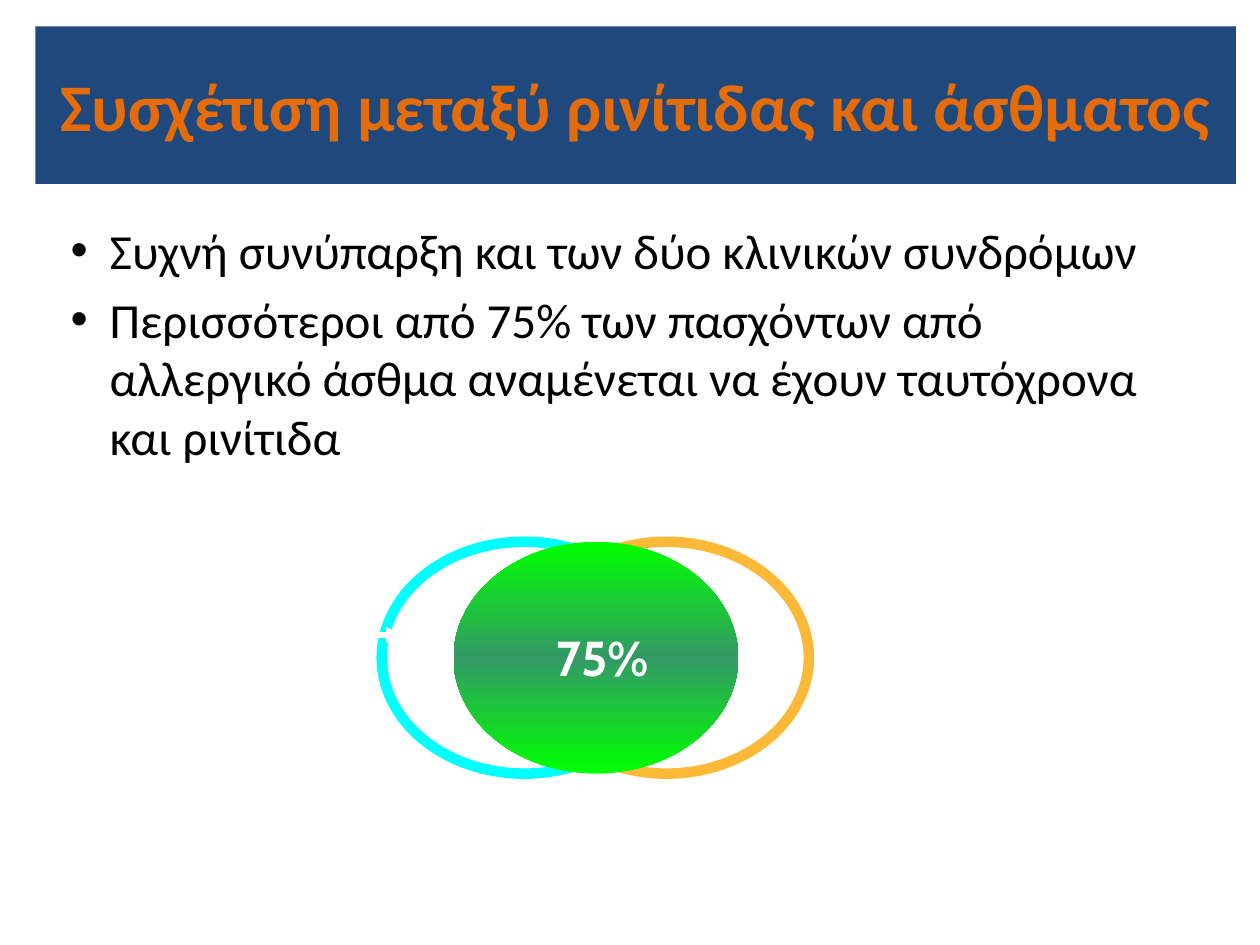
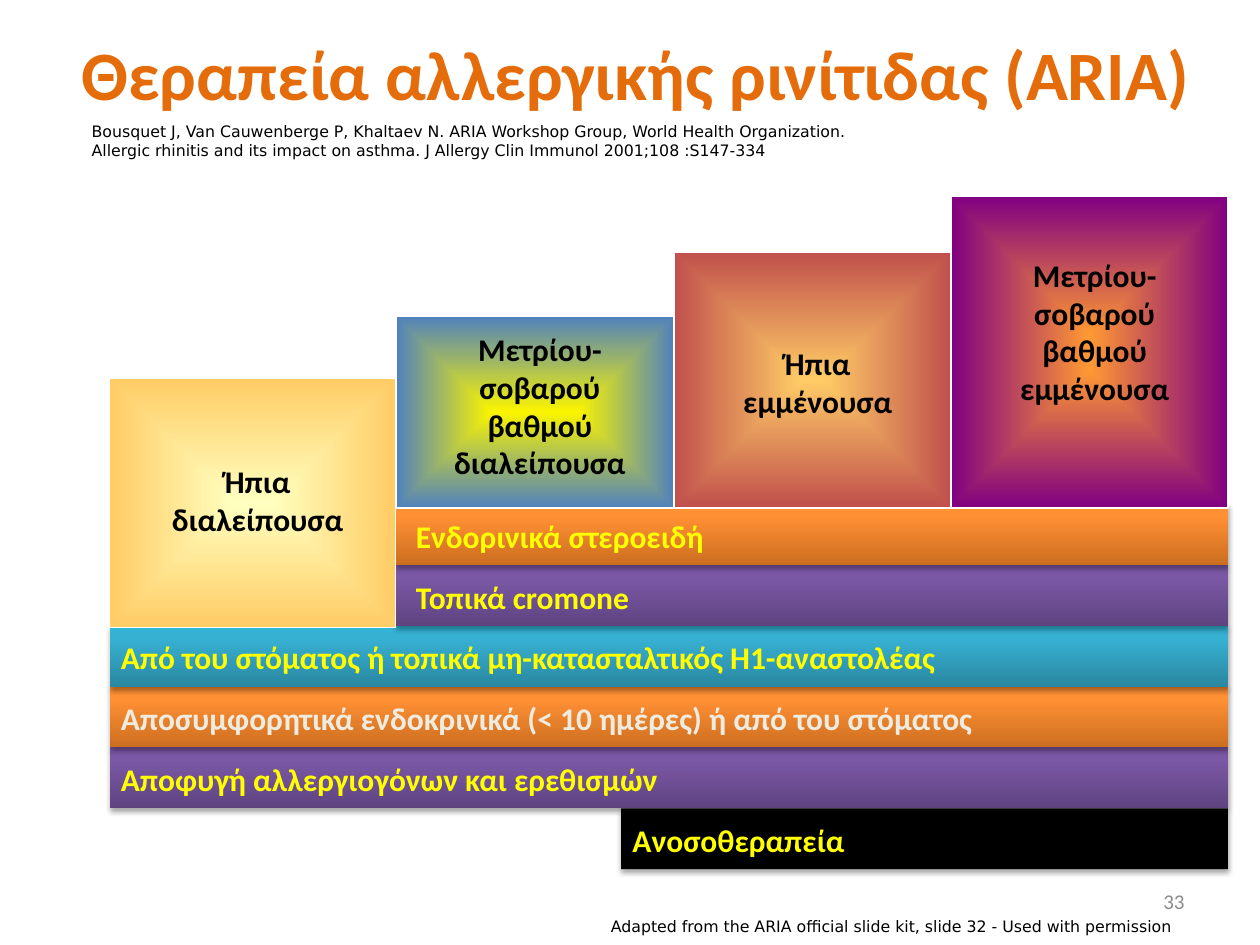
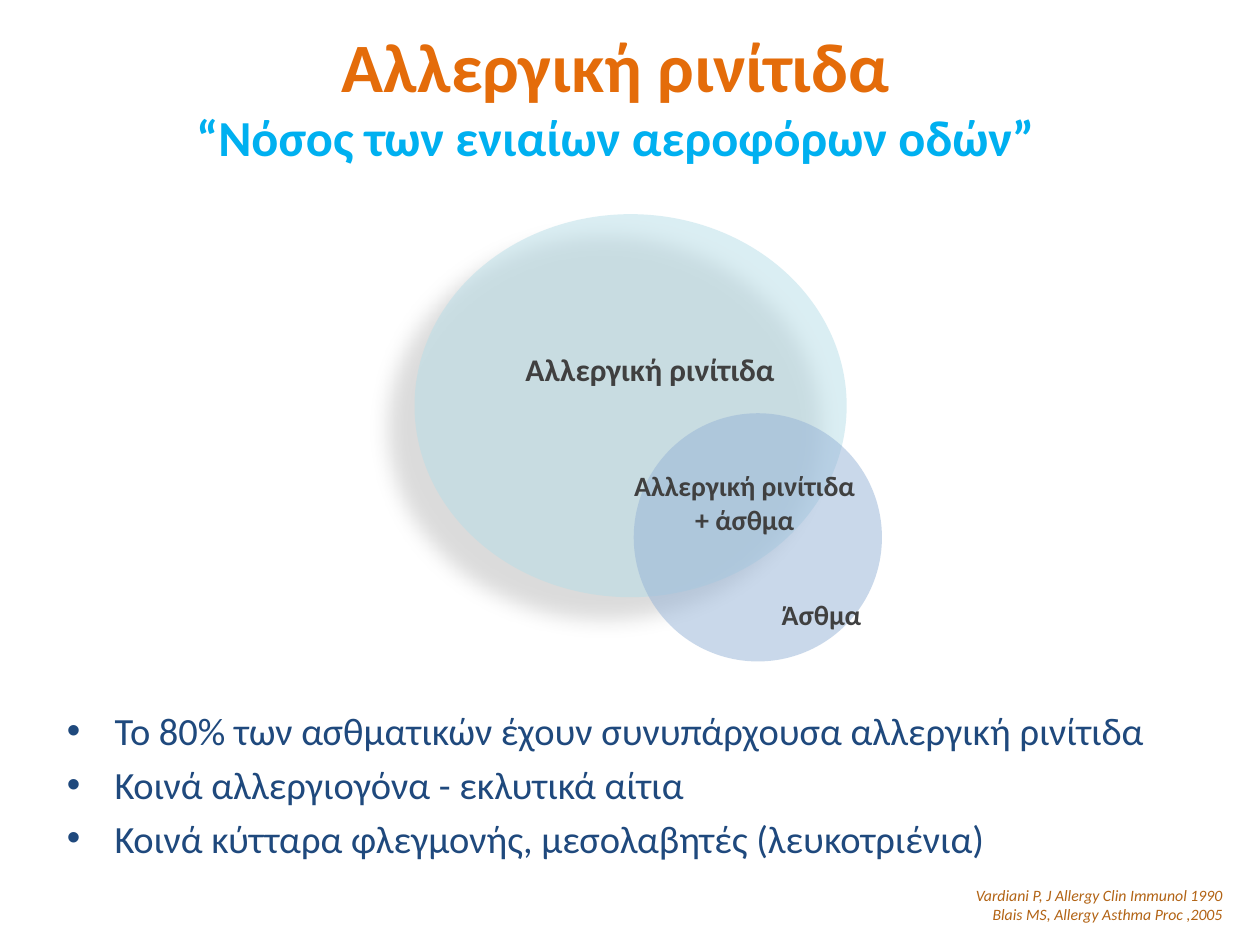
from copy import deepcopy
from typing import NamedTuple, Optional

from pptx import Presentation
from pptx.dml.color import RGBColor
from pptx.enum.shapes import MSO_CONNECTOR, MSO_SHAPE
from pptx.enum.text import MSO_ANCHOR, MSO_AUTO_SIZE, PP_ALIGN
from pptx.oxml import parse_xml
from pptx.oxml.ns import nsdecls, qn
from pptx.util import Inches, Pt

SLIDE_W, SLIDE_H = Inches(10), Inches(7.5)
COL, ROW = SLIDE_W / 100, SLIDE_H / 75  # grid of 100 columns by 75 rows

NAVY = RGBColor(0x1F, 0x49, 0x7D)
ORANGE = RGBColor(0xE4, 0x6C, 0x0A)
SKY = RGBColor(0x00, 0xB0, 0xF0)
BLACK = RGBColor(0x00, 0x00, 0x00)
WHITE = RGBColor(0xFF, 0xFF, 0xFF)
YELLOW = RGBColor(0xFF, 0xFF, 0x00)
CREAM = RGBColor(0xEE, 0xEC, 0xE1)
GREY = RGBColor(0x8C, 0x8C, 0x8C)
CHARCOAL = RGBColor(0x40, 0x40, 0x40)
BROWN = RGBColor(0xB2, 0x63, 0x14)
CYAN = RGBColor(0x00, 0xFF, 0xFF)
AMBER = RGBColor(0xFC, 0xB9, 0x38)
LIME = RGBColor(0x00, 0xFF, 0x00)
SEA_GREEN = RGBColor(0x33, 0x99, 0x66)
PALE_TEAL = RGBColor(0xB7, 0xDE, 0xE8)
PALE_BLUE = RGBColor(0x95, 0xB3, 0xD7)
SAND = RGBColor(0xFF, 0xCC, 0x66)


class Box(NamedTuple):
    """A place on the grid, in columns and rows."""
    left: float
    top: float
    width: float
    height: float

    def emu(self) -> tuple:
        return (round(self.left * COL), round(self.top * ROW),
                round(self.width * COL), round(self.height * ROW))


class Style(NamedTuple):
    size: float
    color: RGBColor
    bold: bool = False
    italic: bool = False
    name: str = "Calibri"


class Gradient(NamedTuple):
    """Stops are (percent, colour); no angle means a fill from the centre."""
    stops: tuple
    angle: Optional[int] = None


class Shadow(NamedTuple):
    alpha: int
    blur: float
    distance: float
    angle: int


class Bar(NamedTuple):
    text: str
    left: float
    inset: float
    fill: object
    color: RGBColor = YELLOW


class Stage(NamedTuple):
    lines: list
    left: float
    top: float
    bottom: float
    label_top: float
    inner: RGBColor
    outer: RGBColor


TITLE = Style(39.6, ORANGE, bold=True)
LABEL = Style(18, BLACK, bold=True)
SOURCE = Style(9, BLACK, name="DejaVu Sans")
NO_INSETS = dict.fromkeys(
    ("margin_left", "margin_top", "margin_right", "margin_bottom"), 0)


def bar_gradient(*colors: str) -> Gradient:
    stops = zip((0, 80, 100), map(RGBColor.from_string, colors))
    return Gradient(tuple(stops), 270)


PURPLE_BAR = bar_gradient("5F4480", "7B58A6", "7C57A8")
ORANGE_BAR = bar_gradient("CC6E20", "FF9034", "FF9136")
TEAL_BAR = bar_gradient("2A88A2", "37B1D2", "34B4D6")
BAR_SHADOW = Shadow(35, 3.1, 1.8, 90)

RIGHT_EDGE, BARS_TOP, BAR_H, LINE_H = 97.45, 40, 4.83, 3.02
BARS = [
    Bar("Ενδορινικά στεροειδή", 31.4, 1.6, ORANGE_BAR),
    Bar("Τοπικά cromone", 31.4, 1.6, PURPLE_BAR),
    Bar("Από του στόματος ή τοπικά μη-κατασταλτικός H1-αναστολέας",
        8.7, 0.9, TEAL_BAR),
    Bar("Αποσυμφορητικά ενδοκρινικά (< 10 ημέρες) ή από του στόματος",
        8.7, 0.9, ORANGE_BAR, CREAM),
    Bar("Αποφυγή αλλεργιογόνων και ερεθισμών", 8.7, 0.9, PURPLE_BAR),
    Bar("Ανοσοθεραπεία", 49.3, 0.9, BLACK),
]
SEVERE = ["Μετρίου-", "σοβαρού", "βαθμού"]
STAGES = [
    Stage(["Ήπια\vδιαλείπουσα"], 8.7, 30, 49.8, 36.7,
          RGBColor(0xFF, 0xFF, 0xBF), SAND),
    Stage(SEVERE + ["διαλείπουσα"], 31.4, 25.1, 40.3, 26.2,
          RGBColor(0xFA, 0xF4, 0x00), RGBColor(0x4F, 0x81, 0xBD)),
    Stage(["Ήπια", "εμμένουσα"], 53.5, 20, 40.3, 27.3,
          SAND, RGBColor(0xC0, 0x50, 0x4D)),
    Stage(SEVERE + ["εμμένουσα"], 75.5, 15.6, 40.3, 20.3,
          RGBColor(0xFF, 0x99, 0x33), RGBColor(0x80, 0x00, 0x80)),
]


def style_run(r, style: Style) -> None:
    values = style._asdict()
    r.font.color.rgb = values.pop("color")
    values["size"] = Pt(style.size)
    for key, value in values.items():
        setattr(r.font, key, value)


def write(tf, lines: list, style: Style, align=PP_ALIGN.LEFT, **frame) -> None:
    """Fill a text frame, one paragraph a line; \\v breaks inside a paragraph."""
    for key, value in {"word_wrap": True, "auto_size": MSO_AUTO_SIZE.NONE, **frame}.items():
        setattr(tf, key, value)
    for i, line in enumerate(lines):
        p = tf.add_paragraph() if i else tf.paragraphs[0]
        p.text, p.alignment = line, align
        for r in p.runs:
            style_run(r, style)
        for br in p._p.findall(qn("a:br")):
            br.insert(0, deepcopy(p.runs[0]._r.rPr))


def add_text(s, box: Box, lines: list, style: Style, **kwargs) -> None:
    write(s.shapes.add_textbox(*box.emu()).text_frame, lines, style, **kwargs)


def place(sp, box: Box) -> None:
    for key, value in zip(("left", "top", "width", "height"), box.emu()):
        setattr(sp, key, value)


def set_title(s, box: Box, text: str, style: Style = TITLE):
    sp = s.shapes.title
    place(sp, box)
    write(sp.text_frame, [text], style, PP_ALIGN.CENTER,
          vertical_anchor=MSO_ANCHOR.MIDDLE)
    return sp


def set_bullets(s, box: Box, lines: list, style: Style, margin: float, hang: float) -> None:
    sp = s.placeholders[1]
    place(sp, box)
    write(sp.text_frame, lines, style)
    for p in sp.text_frame.paragraphs:
        pPr = p._p.get_or_add_pPr()
        pPr.set("marL", str(round(margin * COL)))
        pPr.set("indent", str(round(-hang * COL)))


def set_gradient(sp, gradient: Gradient) -> None:
    stops = "".join(f'<a:gs pos="{pos * 1000}"><a:srgbClr val="{color}"/></a:gs>'
                    for pos, color in gradient.stops)
    if gradient.angle is None:
        shade = ('<a:path path="shape"><a:fillToRect l="50000" t="50000" '
                 'r="50000" b="50000"/></a:path>')
    else:
        shade = f'<a:lin ang="{gradient.angle * 60000}" scaled="0"/>'
    sp.fill.gradient()
    spPr = sp._element.spPr
    spPr.replace(spPr.find(qn("a:gradFill")), parse_xml(
        f'<a:gradFill {nsdecls("a")} rotWithShape="1"><a:gsLst>{stops}</a:gsLst>'
        f'{shade}</a:gradFill>'))


def set_shadow(sp, shadow: Shadow) -> None:
    sp._element.spPr.find(qn("a:effectLst")).append(parse_xml(
        f'<a:outerShdw {nsdecls("a")} blurRad="{Pt(shadow.blur)}" '
        f'dist="{Pt(shadow.distance)}" dir="{shadow.angle * 60000}" '
        f'algn="ctr" rotWithShape="0"><a:srgbClr val="{BLACK}">'
        f'<a:alpha val="{shadow.alpha * 1000}"/></a:srgbClr></a:outerShdw>'))


def add_figure(s, kind, box: Box, fill=None, line: Optional[RGBColor] = None,
               line_width: float = 1, alpha: Optional[int] = None,
               shadow: Optional[Shadow] = None) -> None:
    sp = s.shapes.add_shape(kind, *box.emu())
    sp.shadow.inherit = False
    if isinstance(fill, Gradient):
        set_gradient(sp, fill)
    elif fill is None:
        sp.fill.background()
    else:
        sp.fill.solid()
        sp.fill.fore_color.rgb = fill
    if alpha is not None:
        color = sp._element.spPr.find(qn("a:solidFill"))[0]
        color.append(parse_xml(f'<a:alpha {nsdecls("a")} val="{alpha * 1000}"/>'))
    if line is None:
        sp.line.fill.background()
    else:
        sp.line.color.rgb, sp.line.width = line, Pt(line_width)
    if shadow:
        set_shadow(sp, shadow)


def add_arrow(s, left: float, right: float, row: float) -> None:
    y = round(row * ROW)
    cx = s.shapes.add_connector(MSO_CONNECTOR.STRAIGHT, round(left * COL), y,
                                round(right * COL), y)
    cx.line.color.rgb, cx.line.width = WHITE, Pt(3)
    cx.line._get_or_add_ln().append(
        parse_xml(f'<a:tailEnd {nsdecls("a")} type="triangle"/>'))
    cx._element.spPr.append(parse_xml(f'<a:effectLst {nsdecls("a")}/>'))


def build_association(prs) -> None:
    s = prs.slides.add_slide(prs.slide_layouts[1])
    title = set_title(s, Box(2.8, 2.1, 95.3, 12.5),
                      "Συσχέτιση μεταξύ ρινίτιδας και άσθματος",
                      TITLE._replace(size=38))
    title.fill.solid()
    title.fill.fore_color.rgb = NAVY
    set_bullets(s, Box(3.5, 17, 88.2, 29.9), [
        "Συχνή συνύπαρξη και των δύο κλινικών συνδρόμων",
        "Περισσότεροι από 75% των πασχόντων από αλλεργικό άσθμα "
        "αναμένεται να έχουν ταυτόχρονα και ρινίτιδα",
    ], Style(28, BLACK), 4.2, 3.1)
    ring = Box(30.3, 43, 22.6, 18.4)
    for shift, color in ((0, CYAN), (11.3, AMBER)):
        add_figure(s, MSO_SHAPE.OVAL, ring._replace(left=ring.left + shift),
                   line=color, line_width=6)
    add_figure(s, MSO_SHAPE.OVAL, ring._replace(left=36),
               Gradient(((0, LIME), (50, SEA_GREEN), (100, LIME)), 90))
    add_arrow(s, 23.6, 31.9, 50.4)
    add_text(s, Box(39, 49.3, 17.7, 5.7), ["75%"],
             Style(28, WHITE, bold=True, name="Cabin"), align=PP_ALIGN.CENTER)


def build_treatment(prs) -> None:
    s = prs.slides.add_slide(prs.slide_layouts[5])
    set_title(s, Box(2.8, 2.9, 95.3, 5.7), "Θεραπεία αλλεργικής ρινίτιδας (ARIA)")
    add_text(s, Box(71.7, 69.5, 23.3, 4), ["33"], Style(12, GREY),
             align=PP_ALIGN.RIGHT, vertical_anchor=MSO_ANCHOR.MIDDLE)
    for i, bar in reversed(list(enumerate(BARS))):
        box = Box(bar.left, BARS_TOP + i * BAR_H, RIGHT_EDGE - bar.left, BAR_H)
        add_figure(s, MSO_SHAPE.RECTANGLE, box, bar.fill, shadow=BAR_SHADOW)
        label = Box(box.left + bar.inset, box.top + (BAR_H - LINE_H) / 2 + 0.1,
                    box.width - bar.inset, LINE_H)
        add_text(s, label, [bar.text], LABEL._replace(color=bar.color), **NO_INSETS)
    edges = [stage.left for stage in STAGES[1:]] + [RIGHT_EDGE]
    for stage, right in zip(STAGES, edges):
        box = Box(stage.left, stage.top, right - stage.left, stage.bottom - stage.top)
        add_figure(s, MSO_SHAPE.RECTANGLE, box,
                   Gradient(((0, stage.inner), (100, stage.outer))), line=WHITE)
        label = Box(box.left + 0.4, stage.label_top, box.width,
                    max(2, len(stage.lines)) * LINE_H)
        add_text(s, label, stage.lines, LABEL, align=PP_ALIGN.CENTER, **NO_INSETS)
    add_text(s, Box(47.5, 72.3, 52.5, 2.5), [
        "Adapted from the ARIA official slide kit, slide 32 - Used with permission",
    ], SOURCE)
    add_text(s, Box(6.3, 9.2, 93.3, 4), [
        "Bousquet J, Van Cauwenberge P, Khaltaev N. ARIA Workshop Group, "
        "World Health Organization.",
        "Allergic rhinitis and its impact on asthma. "
        "J Allergy Clin Immunol 2001;108 :S147-334",
    ], SOURCE)


def build_united_airways(prs) -> None:
    s = prs.slides.add_slide(prs.slide_layouts[1])
    title = set_title(s, Box(3.5, 1.3, 90.7, 12.5),
                      "Αλλεργική ρινίτιδα\v“Νόσος των ενιαίων αεροφόρων οδών”")
    style_run(title.text_frame.paragraphs[0].runs[1], Style(28.8, SKY, bold=True))
    set_bullets(s, Box(4.3, 55.6, 92.1, 13), [
        "Το 80% των ασθματικών έχουν συνυπάρχουσα αλλεργική ρινίτιδα",
        "Κοινά αλλεργιογόνα - εκλυτικά αίτια",
        "Κοινά κύτταρα φλεγμονής, μεσολαβητές (λευκοτριένια)",
    ], Style(22, NAVY), 3.8, 3.8)
    add_text(s, Box(63.4, 69.8, 34.6, 4), [
        "Vardiani P, J Allergy Clin Immunol 1990",
        "Blais MS, Allergy Asthma Proc ,2005",
    ], Style(9, BROWN, italic=True), align=PP_ALIGN.RIGHT)
    add_figure(s, MSO_SHAPE.OVAL, Box(32.9, 17, 34.3, 30.4), PALE_TEAL, alpha=50,
               shadow=Shadow(28, 11.8, 19.7, 141))
    add_figure(s, MSO_SHAPE.OVAL, Box(50.3, 32.8, 19.7, 19.7), PALE_BLUE, alpha=50)
    for box, lines, size in (
        (Box(49.2, 36.7, 19.8, 6.4), ["Αλλεργική ρινίτιδα", "+ άσθμα"], 16),
        (Box(40.6, 27.3, 22, 4), ["Αλλεργική ρινίτιδα"], 18),
        (Box(61, 46.9, 8.4, 3.7), ["Άσθμα"], 16),
    ):
        add_text(s, box, lines, Style(size, CHARCOAL, bold=True),
                 align=PP_ALIGN.CENTER, word_wrap=False)


def main() -> None:
    prs = Presentation()
    prs.slide_width, prs.slide_height = SLIDE_W, SLIDE_H
    for build in (build_association, build_treatment, build_united_airways):
        build(prs)
    prs.save("out.pptx")


if __name__ == "__main__":
    main()
